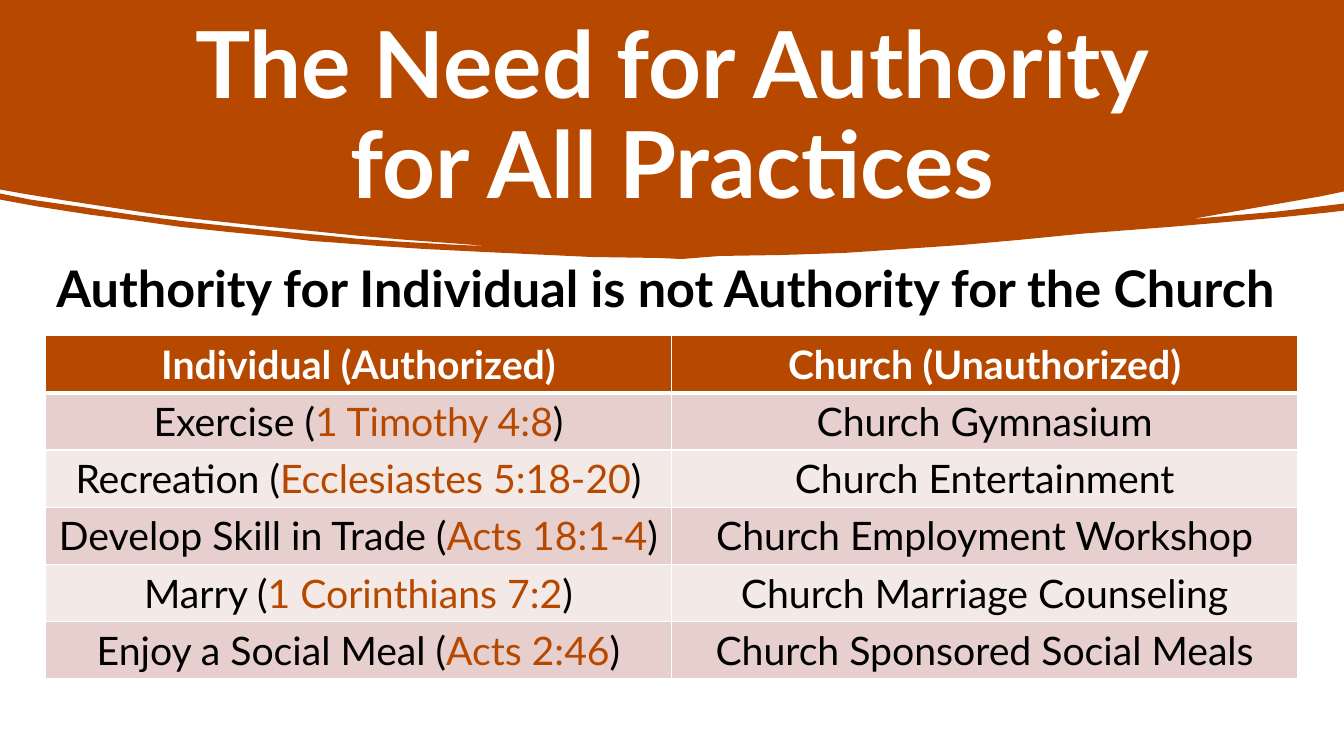
from dataclasses import dataclass

from lxml.etree import SubElement
from pptx import Presentation
from pptx.dml.color import RGBColor
from pptx.enum.text import MSO_ANCHOR, PP_ALIGN
from pptx.oxml.ns import qn
from pptx.util import Inches, Pt

# Content: a tuple of text pieces makes one paragraph, "\n" is a line break
TITLE = ("The Need for Authority", "\n", "for All Practices")
SUBTITLE = ("Authority for Individual is not Authority for the Church",)
HEADINGS = ("Individual (Authorized)", "Church (Unauthorized)")
PRACTICES = [  # individual practice, scripture, church counterpart
    ("Exercise", "1 Timothy 4:8", "Church Gymnasium"),
    ("Recreation", "Ecclesiastes 5:18-20", "Church Entertainment"),
    ("Develop Skill in Trade", "Acts 18:1-4", "Church Employment Workshop"),
    ("Marry", "1 Corinthians 7:2", "Church Marriage Counseling"),
    ("Enjoy a Social Meal", "Acts 2:46", "Church Sponsored Social Meals"),
]

# Banner outline in inches, clockwise from the top left corner
BANNER_TOP = [(0, 0), (13.33, 0), (13.33, 1.9)]
BANNER_RIGHT_SLIT = [
    (13.09, 1.95), (12.46, 2.06), (11.84, 2.17), (11.75, 2.18), (11.86, 2.17),
    (12.66, 2.1), (13.33, 2.02), (13.33, 2.09),
]
BANNER_LOWER_EDGE = [
    (13.16, 2.11), (12.66, 2.16), (11.62, 2.25), (10.72, 2.32), (10.11, 2.38),
    (9.55, 2.43), (8.82, 2.48), (8.37, 2.51), (7.76, 2.53), (7.14, 2.54),
    (6.76, 2.57), (6.54, 2.56), (5.87, 2.55), (4.8, 2.5), (4.2, 2.47),
    (3.75, 2.44), (3.36, 2.41), (3.08, 2.39), (2.76, 2.35), (2.25, 2.3),
    (1.78, 2.25), (1.36, 2.19), (0.89, 2.13), (0.38, 2.05), (0, 1.98),
]
BANNER_LEFT_SLIT = [
    (0, 1.92), (0.3, 1.98), (0.79, 2.05), (1.31, 2.13), (1.86, 2.2),
    (2.42, 2.26), (2.82, 2.3), (3.26, 2.34), (3.55, 2.37), (4, 2.4),
    (4.54, 2.43), (5.04, 2.45), (4.95, 2.45), (4.57, 2.42), (4.03, 2.38),
    (3.56, 2.34), (3.07, 2.29), (2.56, 2.24), (1.92, 2.17), (1.58, 2.13),
    (1.11, 2.06), (0.65, 1.99), (0.22, 1.92), (0, 1.88),
]


@dataclass(frozen=True)
class Theme:
    font: str = "Lato"
    accent: str = "B74800"
    light: str = "FFFFFF"
    dark: str = "000000"
    bands: tuple = ("E6CFCC", "F3E9E7")
    title_size: int = 66
    subtitle_size: int = 36
    table_size: int = 28
    rule: int = 1
    heading_rule: int = 3


THEME = Theme()


def write(frame, pieces, *, size, color=THEME.dark, bold=False, align=None,
          spacing=None, before=None, highlight=None):
    """Fill a text frame with one paragraph; one piece may be highlighted."""
    paragraph = frame.paragraphs[0]
    paragraph.alignment = align
    paragraph.line_spacing = spacing
    paragraph.space_before = before
    for piece in pieces:
        if piece == "\n":
            paragraph.add_line_break()
            continue
        run = paragraph.add_run()
        run.text = piece
        run.font.name = THEME.font
        run.font.size = Pt(size)
        run.font.bold = bold
        shade = THEME.accent if piece == highlight else color
        run.font.color.rgb = RGBColor.from_string(shade)


def add_text(slide, box, pieces, anchor, **text_format):
    frame = slide.shapes.add_textbox(*map(Inches, box)).text_frame
    frame.word_wrap = True
    frame.vertical_anchor = anchor
    write(frame, pieces, **text_format)


def style_cell(cell, fill, top, bottom):
    properties = cell._tc.get_or_add_tcPr()
    widths = {"lnL": THEME.rule, "lnR": THEME.rule, "lnT": top, "lnB": bottom}
    for side, width in widths.items():
        edge = SubElement(properties, qn(f"a:{side}"), w=str(Pt(width)))
        SubElement(SubElement(edge, qn("a:solidFill")), qn("a:srgbClr"), val=THEME.light)
    cell.fill.solid()
    cell.fill.fore_color.rgb = RGBColor.from_string(fill)


def add_banner(slide):
    outline = BANNER_TOP + BANNER_RIGHT_SLIT + BANNER_LOWER_EDGE + BANNER_LEFT_SLIT
    start, *corners = [(Inches(x), Inches(y)) for x, y in outline]
    builder = slide.shapes.build_freeform(*start)
    builder.add_line_segments(corners, close=True)
    banner = builder.convert_to_shape()
    banner.shadow.inherit = False
    banner.fill.solid()
    banner.fill.fore_color.rgb = RGBColor.from_string(THEME.accent)
    banner.line.fill.background()


def add_practices(slide):
    box = map(Inches, (0.45, 3.33, 12.42, 3.4))
    table = slide.shapes.add_table(len(PRACTICES) + 1, len(HEADINGS), *box).table
    table.horz_banding = False

    # Heading row
    for column, heading in enumerate(HEADINGS):
        cell = table.cell(0, column)
        style_cell(cell, THEME.accent, THEME.rule, THEME.heading_rule)
        write(cell.text_frame, (heading,), size=THEME.table_size,
              color=THEME.light, bold=True, align=PP_ALIGN.CENTER)

    # Practice rows with alternating bands
    for row, (practice, scripture, church) in enumerate(PRACTICES, start=1):
        top = THEME.heading_rule if row == 1 else THEME.rule
        band = THEME.bands[(row - 1) % len(THEME.bands)]
        for column, pieces in enumerate([(f"{practice} (", scripture, ")"), (church,)]):
            cell = table.cell(row, column)
            style_cell(cell, band, top, THEME.rule)
            write(cell.text_frame, pieces, size=THEME.table_size,
                  align=PP_ALIGN.CENTER, highlight=scripture)


def main():
    deck = Presentation()
    deck.slide_width, deck.slide_height = Inches(13.33), Inches(7.5)
    slide = deck.slides.add_slide(deck.slide_layouts[6])

    add_banner(slide)
    add_text(slide, (0.92, 0.44, 11.5, 1.47), TITLE, MSO_ANCHOR.MIDDLE,
             size=THEME.title_size, color=THEME.light, bold=True,
             align=PP_ALIGN.CENTER, spacing=0.9)
    add_text(slide, (0.46, 2.57, 12.42, 4.69), SUBTITLE, MSO_ANCHOR.TOP,
             size=THEME.subtitle_size, bold=True, spacing=0.9, before=Pt(10))
    add_practices(slide)

    deck.save("out.pptx")


if __name__ == "__main__":
    main()
